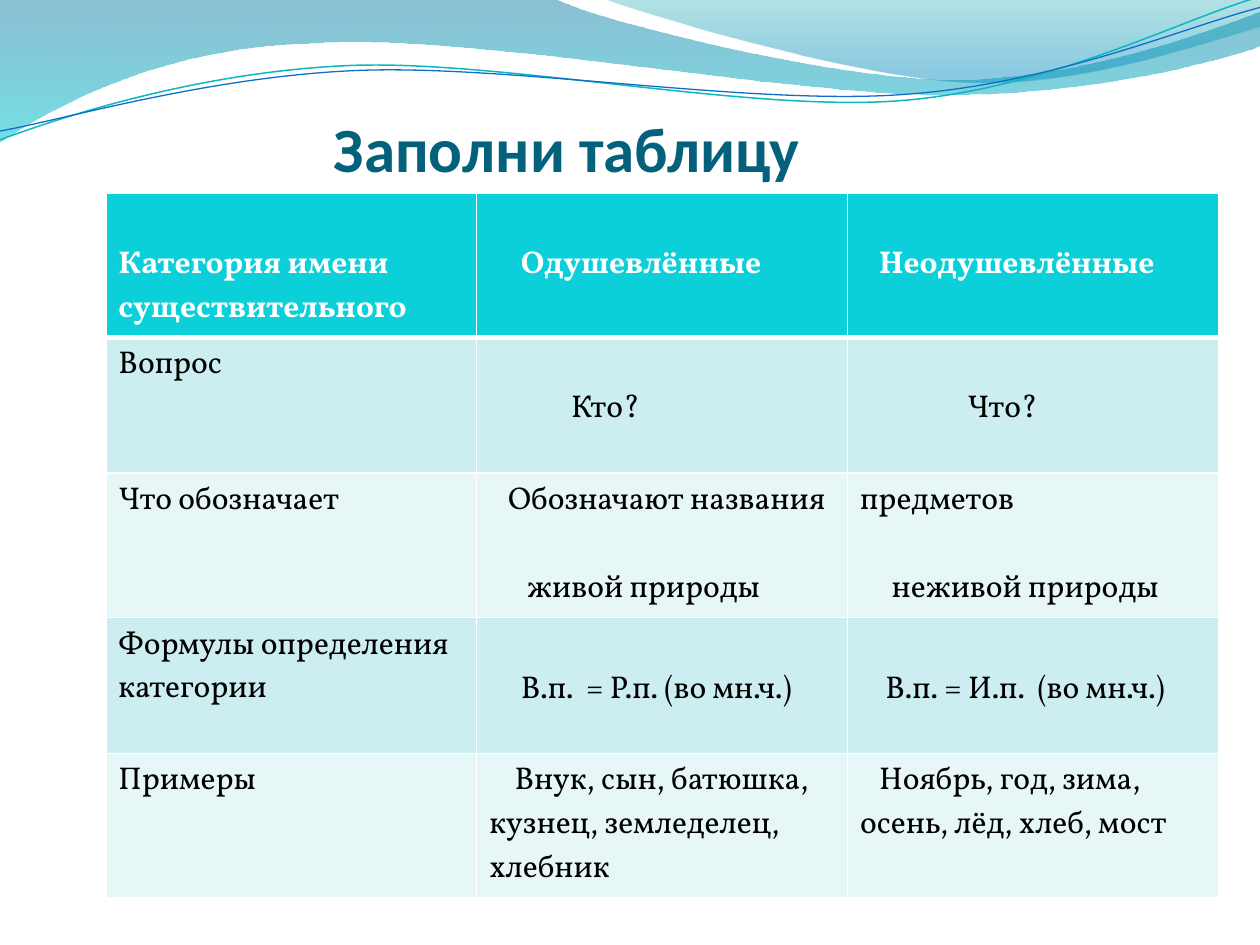
import math

import pptx
import pptx.dml.color
import pptx.enum.text
import pptx.oxml
import pptx.oxml.ns
import pptx.util

RGB = pptx.dml.color.RGBColor
WHITE = RGB(0xFF, 0xFF, 0xFF)
BLACK = RGB(0, 0, 0)
NAVY = RGB(0x04, 0x61, 0x7B)
CYAN = RGB(0x0B, 0xD0, 0xD9)
MIST = RGB(0xCC, 0xEE, 0xF1)
PALE = RGB(0xE7, 0xF7, 0xF8)
TEAL = RGB(0x0A, 0xB8, 0xBF)
BLUE = RGB(0x0F, 0x6F, 0xC6)
DEEP = RGB(0x00, 0x74, 0xA1)
AQUA = RGB(0x00, 0xC6, 0xCF)
SEA = RGB(0x00, 0xA1, 0xA9)
SKY = RGB(0x00, 0x8B, 0xBF)

COLS, ROWS = 10, 7.5
LINE = 0.35
TILT = 2.7

BAND = [(0, 0), (4.4, -0.01),
        (4.76, 0.17, 6.64, 0.63, 7.58, 0.63), (8.53, 0.63, 9.58, 0.26, 10, 0.09),
        (10.01, 0.36),
        (9.83, 0.44, 8.7, 0.76, 7.46, 0.75), (6.22, 0.75, 3.82, 0.28, 2.57, 0.34),
        (1.29, 0.36, 0.46, 0.83, -0.01, 1.13)]
CREST = [(4.79, -0.01), (5.09, 0.11, 6.82, 0.62, 7.69, 0.65),
         (8.56, 0.69, 9.61, 0.32, 10, 0.21), (10, 0)]
UPPER = [(0, 1.11), (0.48, 0.93, 1.58, 0.57, 2.77, 0.52),
         (3.95, 0.47, 5.93, 0.89, 7.13, 0.8), (8.33, 0.71, 9.38, 0.15, 9.98, -0.02)]
LOWER = [(0, 1.04), (0.47, 0.96, 1.64, 0.61, 2.83, 0.56),
         (4.03, 0.51, 5.97, 0.84, 7.17, 0.75), (8.36, 0.67, 9.41, 0.21, 10, 0.06)]

CELLS = [
    [[(0, "Категория имени существительного")],
     [(0.25, "Одушевлённые")],
     [(0.15, "Неодушевлённые")]],
    [[(0, "Вопрос")], [(0.65, "Кто?")], [(0.85, "Что?")]],
    [[(0, "Что обозначает")],
     [(0.15, "Обозначают названия"), (0.3, "живой природы")],
     [(0, "предметов"), (0.25, "неживой природы")]],
    [[(0, "Формулы определения категории")],
     [(0.25, "В.п.  = Р.п. (во мн.ч.)")],
     [(0.2, "В.п. = И.п.  (во мн.ч.)")]],
    [[(0, "Примеры")],
     [(0.2, "Внук, сын, батюшка, кузнец, земледелец, хлебник")],
     [(0.15, "Ноябрь, год, зима, осень, лёд, хлеб, мост")]],
]


def pairs(step):
    return list(zip(step[::2], step[1::2]))


def turn(steps, mid):
    cos, sin = math.cos(math.radians(TILT)), math.sin(math.radians(TILT))
    out = []
    for step in steps:
        flat = []
        for a, b in pairs(step):
            a, b = a - mid[0], b - mid[1]
            flat += [mid[0] + a * cos - b * sin, mid[1] + a * sin + b * cos]
        out.append(tuple(flat))
    return out


class Deck:
    head_font, body_font = "Calibri", "Vollkorn"
    head_size, body_size = 36, 18

    def __init__(self):
        self.show = pptx.Presentation()
        self.show.slide_width = pptx.util.Inches(10)
        self.show.slide_height = pptx.util.Inches(7.5)
        self.slide = self.show.slides.add_slide(self.show.slide_layouts[5])

    def x(self, cols):
        return round(self.show.slide_width * cols / COLS)

    def y(self, rows):
        return round(self.show.slide_height * rows / ROWS)

    def style(self, par, font, size, color, bold):
        for run in par.runs:
            run.font.name, run.font.size = font, pptx.util.Pt(size)
            run.font.color.rgb, run.font.bold = color, bold

    def shape(self, steps, close):
        dots = [(self.x(a), self.y(b)) for step in steps for a, b in pairs(step)]
        form = self.slide.shapes.build_freeform(*dots[0])
        form.add_line_segments(dots[1:], close=close)
        shape = form.convert_to_shape()
        shape.shadow.inherit = False
        legs = iter(list(shape.element.spPr.iter(pptx.oxml.ns.qn("a:lnTo"))))
        for step in steps[1:]:
            leg = next(legs)
            if len(step) == 6:
                leg.tag = pptx.oxml.ns.qn("a:cubicBezTo")
                for rest in (next(legs), next(legs)):
                    leg.append(rest[0])
                    rest.getparent().remove(rest)
        return shape

    def wave(self, steps, stops):
        shape = self.shape(steps, True)
        shape.line.fill.background()
        shape.fill.gradient()
        shape.fill.gradient_angle = 270
        for stop, (place, color, alpha) in zip(shape.fill.gradient_stops, stops):
            stop.position, stop.color.rgb = place, color
        tints = shape.element.spPr.iter(pptx.oxml.ns.qn("a:srgbClr"))
        for tint, (place, color, alpha) in zip(tints, stops):
            tint.append(pptx.oxml.parse_xml(
                f'<a:alpha {pptx.oxml.ns.nsdecls("a")} val="{alpha * 1000}"/>'))

    def curve(self, steps, mid, color, width):
        shape = self.shape(turn(steps, mid), False)
        shape.rotation = -TILT
        shape.fill.background()
        shape.line.color.rgb = color
        shape.line.width = pptx.util.Pt(width)

    def title(self, text, left, top, width, height):
        box = self.slide.shapes.title
        box.left, box.top = self.x(left), self.y(top)
        box.width, box.height = self.x(width), self.y(height)
        frame = box.text_frame
        frame.text = text
        frame.auto_size = pptx.enum.text.MSO_AUTO_SIZE.NONE
        frame.vertical_anchor = pptx.enum.text.MSO_ANCHOR.BOTTOM
        frame.margin_left = frame.margin_right = frame.margin_bottom = 0
        frame.margin_top = self.y(0.05)
        par = frame.paragraphs[0]
        par.alignment = pptx.enum.text.PP_ALIGN.CENTER
        self.style(par, self.head_font, self.head_size, NAVY, True)

    def edge(self, cell, top, base):
        for side, size in zip("LRTB", (1, 1, top, base)):
            cell._tc.get_or_add_tcPr().append(pptx.oxml.parse_xml(
                f'<a:ln{side} {pptx.oxml.ns.nsdecls("a")} w="{pptx.util.Pt(size)}">'
                f'<a:solidFill><a:srgbClr val="{WHITE}"/></a:solidFill></a:ln{side}>'))

    def cell(self, cell, pars, fill, color, bold, drop):
        cell.fill.solid()
        cell.fill.fore_color.rgb = fill
        cell.margin_top = self.y(0.05 + drop)
        frame = cell.text_frame
        frame.text = "\n".join(text for indent, text in pars)
        for n, (par, (indent, text)) in enumerate(zip(frame.paragraphs, pars)):
            props = par._p.get_or_add_pPr()
            props.set("marL", "0")
            props.set("indent", str(self.x(indent)))
            if n:
                par.space_before = self.y(LINE)
            self.style(par, self.body_font, self.body_size, color, bold)

    def table(self, cells, left, top, width, height):
        grid = self.slide.shapes.add_table(
            len(cells), len(cells[0]), self.x(left), self.y(top),
            self.x(width), self.y(height)).table
        for r, row in enumerate(cells):
            head = r == 0
            fill = CYAN if head else MIST if r % 2 else PALE
            for c, pars in enumerate(row):
                drop = LINE if head or (r % 2 and c) else 0
                cell = grid.cell(r, c)
                self.edge(cell, 3 if r == 1 else 1, 3 if head else 1)
                self.cell(cell, pars, fill, WHITE if head else BLACK, head, drop)


def main():
    deck = Deck()
    deck.wave(BAND, [(0, DEEP, 45), (1, AQUA, 55)])
    deck.wave(CREST, [(0, SEA, 30), (0.8, SKY, 45)])
    deck.curve(UPPER, (4.99, 0.58), TEAL, 0.85)
    deck.curve(LOWER, (5, 0.59), BLUE, 0.75)
    deck.title("Заполни таблицу", 0, 0.77, 9, 0.7)
    deck.table(CELLS, 0.84, 1.53, 8.83, 5.39)
    deck.show.save("out.pptx")


if __name__ == "__main__":
    main()
